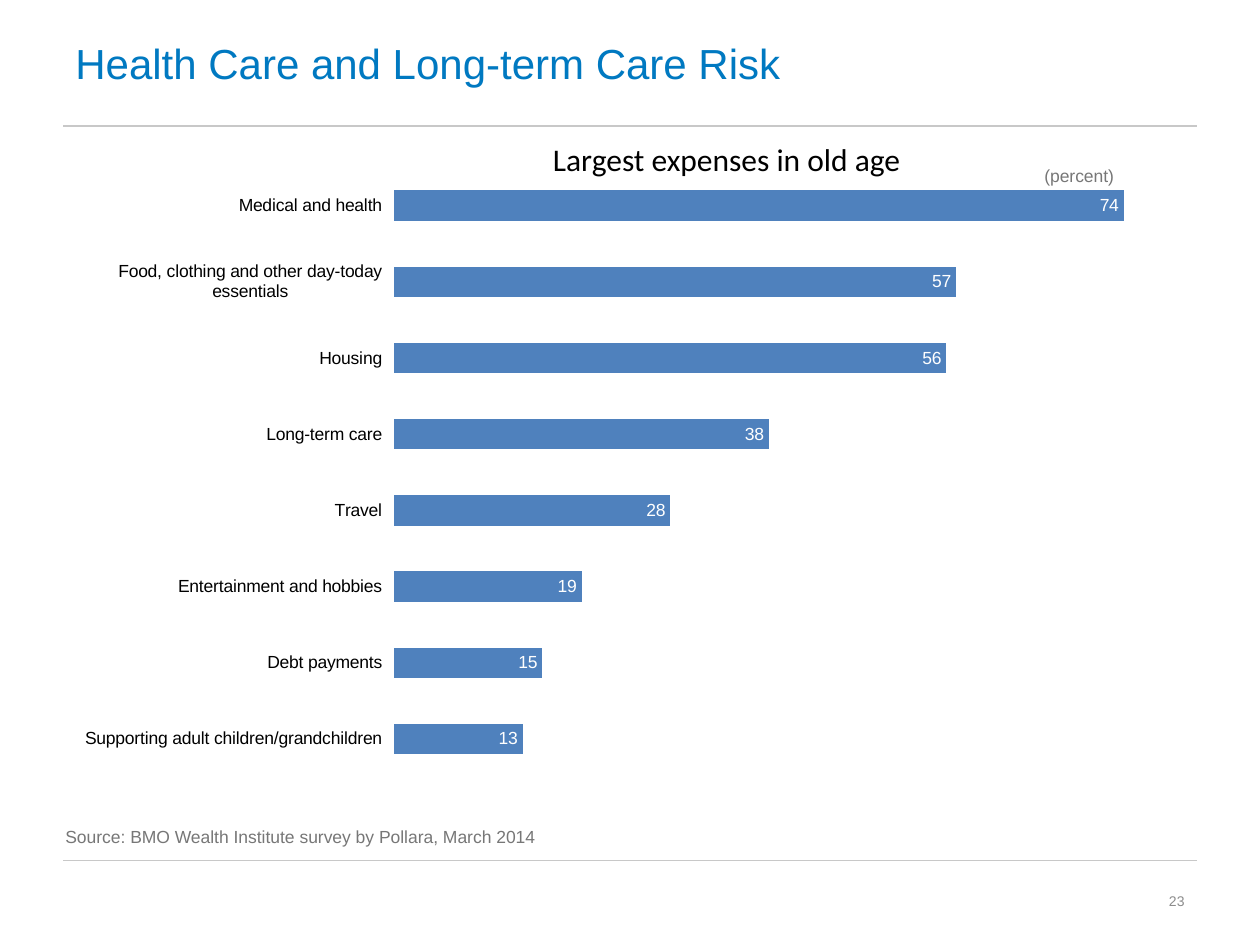
from lxml import etree
from pptx import Presentation
from pptx import util as u
from pptx.chart.data import CategoryChartData
from pptx.dml.color import RGBColor
from pptx.enum import chart as ch, shapes, text
from pptx.oxml import parse_xml
from pptx.oxml.ns import qn

BLUE = RGBColor(0x00, 0x79, 0xC1)
BAR = RGBColor(0x4F, 0x81, 0xBD)
RULE = RGBColor(0xC8, 0xC8, 0xC8)
GREY = RGBColor(0x77, 0x77, 0x77)
PAGE_GREY = RGBColor(0x8C, 0x8C, 0x8C)
BLACK = RGBColor(0, 0, 0)
WHITE = RGBColor(255, 255, 255)

prs = Presentation()
prs.slide_width, prs.slide_height = u.Inches(10), u.Inches(7.5)
s = prs.slides.add_slide(prs.slide_layouts[6])
MARGIN = 0.05 * prs.slide_width
BODY = prs.slide_width - 2 * MARGIN


def add_text(box, words, size, color, font="Arial", align=text.PP_ALIGN.LEFT,
             anchor=text.MSO_ANCHOR.TOP, wrap=True):
    tf = s.shapes.add_textbox(*(u.Inches(v) for v in box)).text_frame
    tf.word_wrap = wrap
    tf.vertical_anchor = anchor
    p = tf.paragraphs[0]
    p.alignment = align
    r = p.add_run()
    r.text = words
    r.font.size, r.font.name, r.font.color.rgb = u.Pt(size), font, color


# Rules under the title and above the footer
for y in (1, 6.83):
    line = s.shapes.add_connector(shapes.MSO_CONNECTOR.STRAIGHT, int(MARGIN), u.Inches(y),
                                  int(MARGIN + BODY), u.Inches(y))
    line.line.color.rgb, line.line.width = RULE, u.Pt(0.75)
    etree.SubElement(line._element.spPr, qn("a:effectLst"))

# Title
add_text((0.5, 0, 9, 1), "Health Care and Long-term Care Risk", 24, BLUE,
         anchor=text.MSO_ANCHOR.MIDDLE)

# Expense chart, listed from the bottom bar up
expenses = {
    "Supporting adult children/grandchildren": 13,
    "Debt payments": 15,
    "Entertainment and hobbies": 19,
    "Travel": 28,
    "Long-term care": 38,
    "Housing": 56,
    "Food, clothing and other day-today essentials": 57,
    "Medical and health": 74,
}
data = CategoryChartData()
data.categories = list(expenses)
data.add_series("Series 1", list(expenses.values()))
chart = s.shapes.add_chart(ch.XL_CHART_TYPE.BAR_CLUSTERED, u.Inches(0.5), u.Inches(1.23),
                           u.Inches(9.07), u.Inches(5.04), data).chart
chart.has_legend = chart.has_title = False
chart.font.size, chart.font.name, chart.font.color.rgb = u.Pt(10), "Arial", BLACK

axis = chart.category_axis
axis.format.line.fill.background()
axis.has_major_gridlines = False
values = chart.value_axis
values.minimum_scale, values.maximum_scale = 0, 80
values.has_major_gridlines = False
values.visible = False

plot = chart.plots[0]
plot.gap_width, plot.vary_by_categories = 150, False
bars = plot.series[0]
bars.format.fill.solid()
bars.format.fill.fore_color.rgb = BAR
labels = bars.data_labels
labels.show_value = True
labels.position = ch.XL_LABEL_POSITION.INSIDE_END
labels.font.size, labels.font.name, labels.font.color.rgb = u.Pt(10), "Arial", WHITE

# Fixed plot area, as shares of the chart frame
area = chart._chartSpace.chart.plotArea
for old in area.findall(qn("c:layout")):
    area.remove(old)
shares = "".join(f'<c:{k} val="{v}"/>' for k, v in
                 (("x", 0.29), ("y", 0.02), ("w", 0.69), ("h", 0.96)))
area.insert(0, parse_xml(
    '<c:layout xmlns:c="http://schemas.openxmlformats.org/drawingml/2006/chart">'
    '<c:manualLayout><c:layoutTarget val="inner"/><c:xMode val="edge"/>'
    f'<c:yMode val="edge"/>{shares}</c:manualLayout></c:layout>'))

# Page number, unit, source and chart heading
add_text((7.17, 6.95, 2.33, 0.4), "23", 8, PAGE_GREY, align=text.PP_ALIGN.RIGHT,
         anchor=text.MSO_ANCHOR.MIDDLE)
add_text((7.68, 1.26, 1.26, 0.27), "(percent)", 10, GREY, align=text.PP_ALIGN.RIGHT)
add_text((0.42, 6.51, 7.49, 0.27),
         "Source: BMO Wealth Institute survey by Pollara, March 2014", 10, GREY)
add_text((4.29, 1.06, 2.99, 0.4), "Largest expenses in old age", 18, BLACK,
         font="Calibri", wrap=False)

prs.save("out.pptx")
